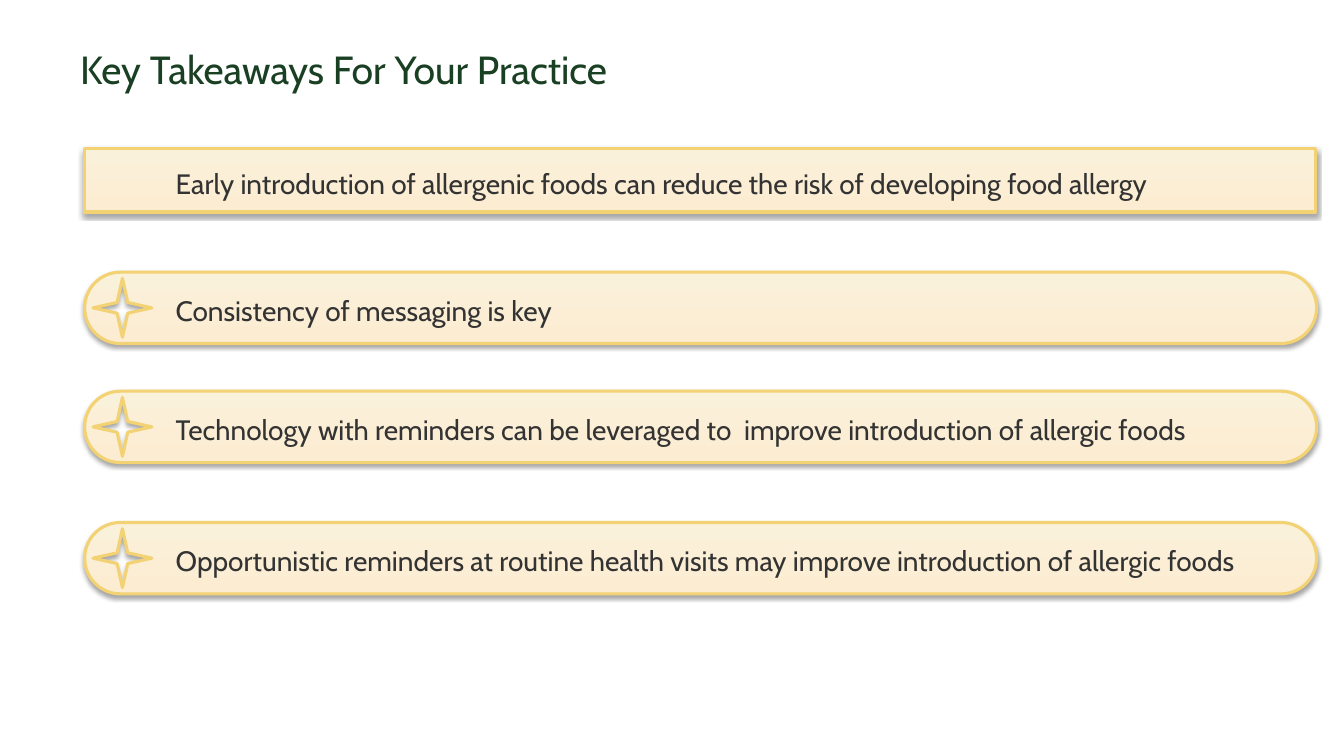
from math import cos, pi, sin

from lxml import etree
from pptx import Presentation
from pptx.dml.color import RGBColor
from pptx.enum.shapes import MSO_SHAPE as Shape
from pptx.enum.text import MSO_ANCHOR as Anchor, MSO_AUTO_SIZE as AutoSize, PP_ALIGN as Align
from pptx.oxml.ns import qn
from pptx.util import Pt

BAR_LEFT, BAR_WIDTH, BAR_HEIGHT = 60.5, 880, 51
STAR_OFFSET = 27
CAP_STEPS = 32


def color(value):
    return RGBColor.from_string(value)


def format_bar(bar, text):
    # Vertical gradient, gold outline and soft shadow below
    bar.fill.gradient()
    bar.fill.gradient_angle = 270
    for stop, value in zip(bar.fill.gradient_stops, ("FAF1DA", "FCEDD2")):
        stop.color.rgb = color(value)
    bar.line.color.rgb = color("F3D274")
    bar.line.width = Pt(2.25)
    bar.shadow.inherit = False
    effects = bar._element.spPr.find(qn("a:effectLst"))
    shadow = etree.SubElement(effects, qn("a:outerShdw"), blurRad=str(Pt(3.1)),
                              dist=str(Pt(1.8)), dir="5400000", rotWithShape="0")
    black = etree.SubElement(shadow, qn("a:srgbClr"), val="000000")
    etree.SubElement(black, qn("a:alpha"), val="35000")

    # Left-aligned message, clear of the star
    frame = bar.text_frame
    frame.word_wrap = True
    frame.vertical_anchor = Anchor.MIDDLE
    frame.margin_left, frame.margin_right = Pt(65), Pt(7.2)
    frame.margin_top, frame.margin_bottom = Pt(7.2), Pt(3.6)
    para = frame.paragraphs[0]
    para.text = text
    para.alignment = Align.LEFT
    para.font.name = "Cabin"
    para.font.size = Pt(20)
    para.font.color.rgb = color("333333")


deck = Presentation()
deck.slide_width, deck.slide_height = Pt(960), Pt(540)
page = deck.slides.add_slide(deck.slide_layouts[5])

# Title
title = page.shapes.title
title.left, title.top, title.width, title.height = Pt(50), Pt(16), Pt(880), Pt(70.5)
frame = title.text_frame
frame.text = "Key Takeaways For Your Practice"
frame.auto_size = AutoSize.NONE
frame.vertical_anchor = Anchor.MIDDLE
para = frame.paragraphs[0]
para.alignment = Align.LEFT
para.line_spacing = 0.9
para.font.name = "Cabin"
para.font.size = Pt(28)
para.font.color.rgb = color("1A4023")

# First takeaway: square bar
first_bar = page.shapes.add_shape(Shape.RECTANGLE, Pt(BAR_LEFT), Pt(106),
                                  Pt(BAR_WIDTH - 1), Pt(45.5))
format_bar(first_bar, "Early introduction of allergenic foods can reduce the risk of "
                      "developing food allergy")

# Other takeaways: rounded bars with a four-point star cut out
takeaways = [
    (194.4, "Consistency of messaging is key"),
    (279.4, "Technology with reminders can be leveraged to  improve introduction of allergic foods"),
    (373.2, "Opportunistic reminders at routine health visits may improve introduction of "
            "allergic foods"),
]
radius = BAR_HEIGHT / 2
for top, text in takeaways:
    middle = top + radius

    # Outline runs clockwise: right cap, then left cap
    outline = []
    for center, start in ((BAR_LEFT + BAR_WIDTH - radius, -pi / 2), (BAR_LEFT + radius, pi / 2)):
        for step in range(CAP_STEPS + 1):
            angle = start + pi * step / CAP_STEPS
            outline.append((Pt(center + radius * cos(angle)), Pt(middle + radius * sin(angle))))

    # Star runs the other way, so that it stays open
    star = []
    for step in range(8):
        angle = -pi / 2 - step * pi / 4
        reach = 5.4 if step % 2 else 21
        star.append((Pt(BAR_LEFT + STAR_OFFSET + reach * cos(angle)),
                     Pt(middle + reach * sin(angle))))

    builder = page.shapes.build_freeform(*star[0])
    builder.add_line_segments(star[1:], close=True)
    builder.move_to(*outline[0])
    builder.add_line_segments(outline[1:], close=True)
    format_bar(builder.convert_to_shape(), text)

deck.save("out.pptx")
